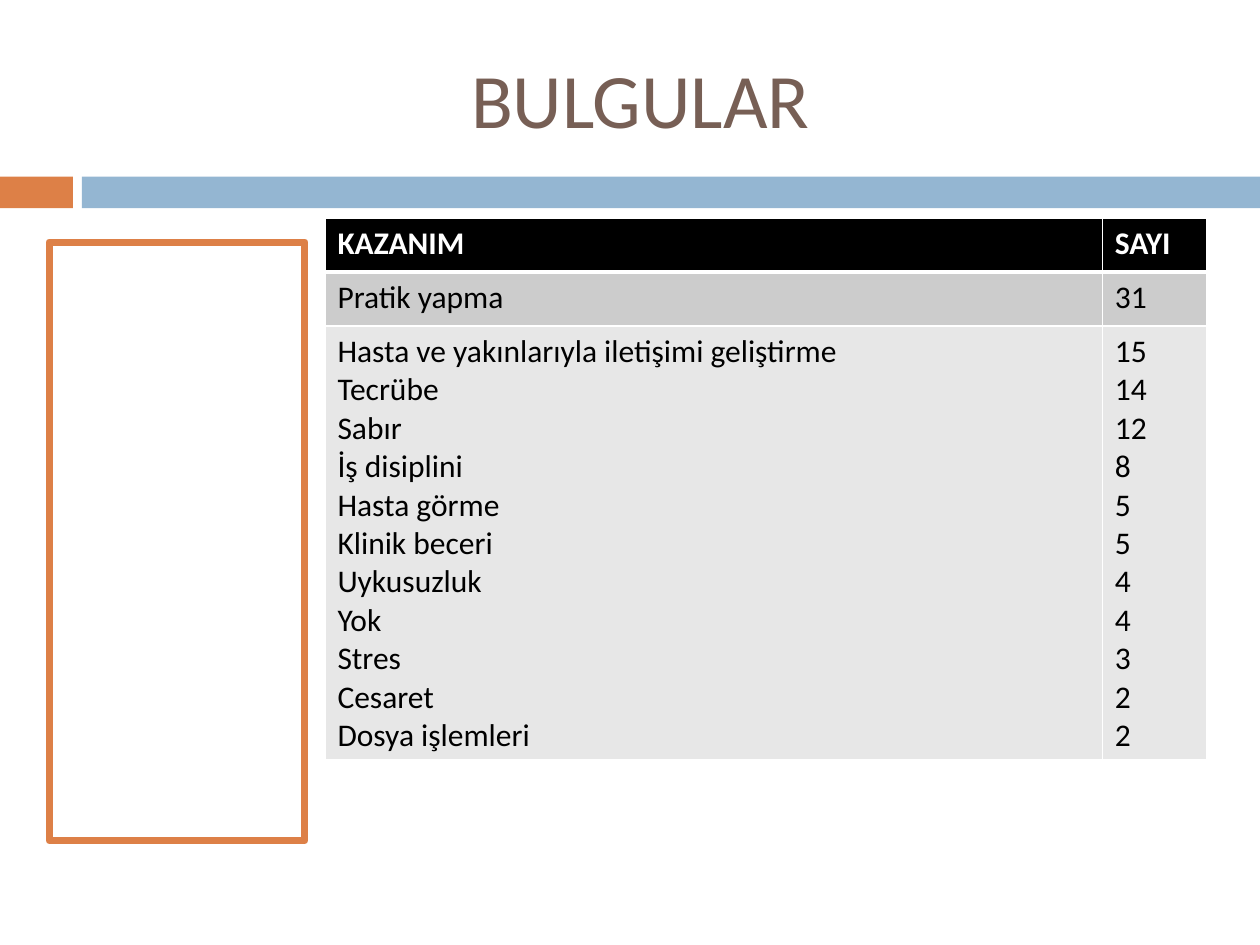
import dataclasses

import pptx
import pptx.dml.color
import pptx.enum.shapes
import pptx.enum.text
import pptx.oxml.xmlchemy
import pptx.util
from lxml import etree
from pptx.oxml.ns import qn
from pptx.util import Cm

FONT = "Calibri"
WHITE, BLACK = "FFFFFF", "000000"
ORANGE, BLUE, BROWN = "DD8047", "94B6D2", "775F55"


@dataclasses.dataclass(frozen=True)
class Box:
    left: float
    top: float
    width: float
    height: float

    def lengths(self) -> tuple:
        return tuple(Cm(v) for v in (self.left, self.top, self.width, self.height))


@dataclasses.dataclass(frozen=True)
class Band:
    """A table row; each cell may hold several lines."""
    gains: list[str]
    counts: list[str]
    height: float
    fill: str
    color: str = BLACK
    bold: bool = False
    rule_above: float = 1
    rule_below: float = 1


BARS = [(Box(0, 3.56, 1.47, 0.64), ORANGE), (Box(1.65, 3.56, 23.75, 0.64), BLUE)]
TITLE = Box(1.7, 0.76, 22.43, 2.41)
FRAME = Box(0.99, 4.88, 5.16, 12.07)
TABLE = Box(6.55, 4.39, 17.78, 10.92)
COLUMN_WIDTHS = (15.67, 2.11)
COUNT_INDENT = 0.97

GAINS = [
    ("Hasta ve yakınlarıyla iletişimi geliştirme", "15"),
    ("Tecrübe", "14"),
    ("Sabır", "12"),
    ("İş disiplini", "8"),
    ("Hasta görme", "5"),
    ("Klinik beceri", "5"),
    ("Uykusuzluk", "4"),
    ("Yok", "4"),
    ("Stres", "3"),
    ("Cesaret", "2"),
    ("Dosya işlemleri", "2"),
]
BANDS = [
    Band(["KAZANIM"], ["SAYI"], 1.09, BLACK, color=WHITE, bold=True, rule_below=3),
    Band(["Pratik yapma"], ["31"], 1.09, "CCCCCC", rule_above=3),
    Band([gain for gain, _ in GAINS], [count for _, count in GAINS], 8.74, "E7E7E7"),
]


def rgb(code: str) -> pptx.dml.color.RGBColor:
    return pptx.dml.color.RGBColor.from_string(code)


def write(frame, lines: list[str], *, size: float, color: str, bold: bool = False,
          align=None, hanging: float = 0) -> None:
    for index, line in enumerate(lines):
        paragraph = frame.add_paragraph() if index else frame.paragraphs[0]
        paragraph.alignment = align
        if hanging:
            properties = paragraph._p.get_or_add_pPr()
            properties.set("marL", str(Cm(hanging)))
            properties.set("indent", str(-Cm(hanging)))
        run = paragraph.add_run()
        run.text = line
        run.font.name = FONT
        run.font.size = pptx.util.Pt(size)
        run.font.bold = bold
        run.font.color.rgb = rgb(color)


def add_rectangle(slide, box: Box, *, fill: str | None = None,
                  line: str | None = None, weight: float = 1) -> None:
    rectangle = slide.shapes.add_shape(
        pptx.enum.shapes.MSO_SHAPE.RECTANGLE, *box.lengths())
    rectangle.shadow.inherit = False
    if fill:
        rectangle.fill.solid()
        rectangle.fill.fore_color.rgb = rgb(fill)
    else:
        rectangle.fill.background()
    if line:
        rectangle.line.color.rgb = rgb(line)
        rectangle.line.width = pptx.util.Pt(weight)
    else:
        rectangle.line.fill.background()


def set_borders(cell, color: str, weights: dict[str, float]) -> None:
    properties = cell._tc.get_or_add_tcPr()
    for side, weight in weights.items():
        border = etree.SubElement(properties, qn(f"a:ln{side}"),
                                  w=str(pptx.util.Pt(weight)))
        fill = etree.SubElement(border, qn("a:solidFill"))
        etree.SubElement(fill, qn("a:srgbClr"), val=color)


def add_title(slide, text: str) -> None:
    frame = slide.shapes.add_textbox(*TITLE.lengths()).text_frame
    frame.word_wrap = True
    frame.vertical_anchor = pptx.enum.text.MSO_ANCHOR.MIDDLE
    write(frame, [text], size=44, color=BROWN, align=pptx.enum.text.PP_ALIGN.CENTER)


def add_gain_table(slide) -> None:
    table = slide.shapes.add_table(
        len(BANDS), len(COLUMN_WIDTHS), *TABLE.lengths()).table
    for column, width in zip(table.columns, COLUMN_WIDTHS):
        column.width = Cm(width)
    for row, band in zip(table.rows, BANDS):
        row.height = Cm(band.height)
        weights = {"L": 1, "R": 1, "T": band.rule_above, "B": band.rule_below}
        for index, (cell, lines) in enumerate(zip(row.cells, (band.gains, band.counts))):
            set_borders(cell, WHITE, weights)
            cell.fill.solid()
            cell.fill.fore_color.rgb = rgb(band.fill)
            hanging = COUNT_INDENT if index and len(lines) > 1 else 0
            write(cell.text_frame, lines, size=18, color=band.color,
                  bold=band.bold, hanging=hanging)


def main() -> None:
    deck = pptx.Presentation()
    deck.slide_width, deck.slide_height = Cm(25.4), Cm(19.05)
    slide = deck.slides.add_slide(deck.slide_layouts[6])
    for box, color in BARS:
        add_rectangle(slide, box, fill=color)
    add_title(slide, "BULGULAR")
    add_rectangle(slide, FRAME, line=ORANGE, weight=4)
    add_gain_table(slide)
    deck.save("out.pptx")


if __name__ == "__main__":
    main()
